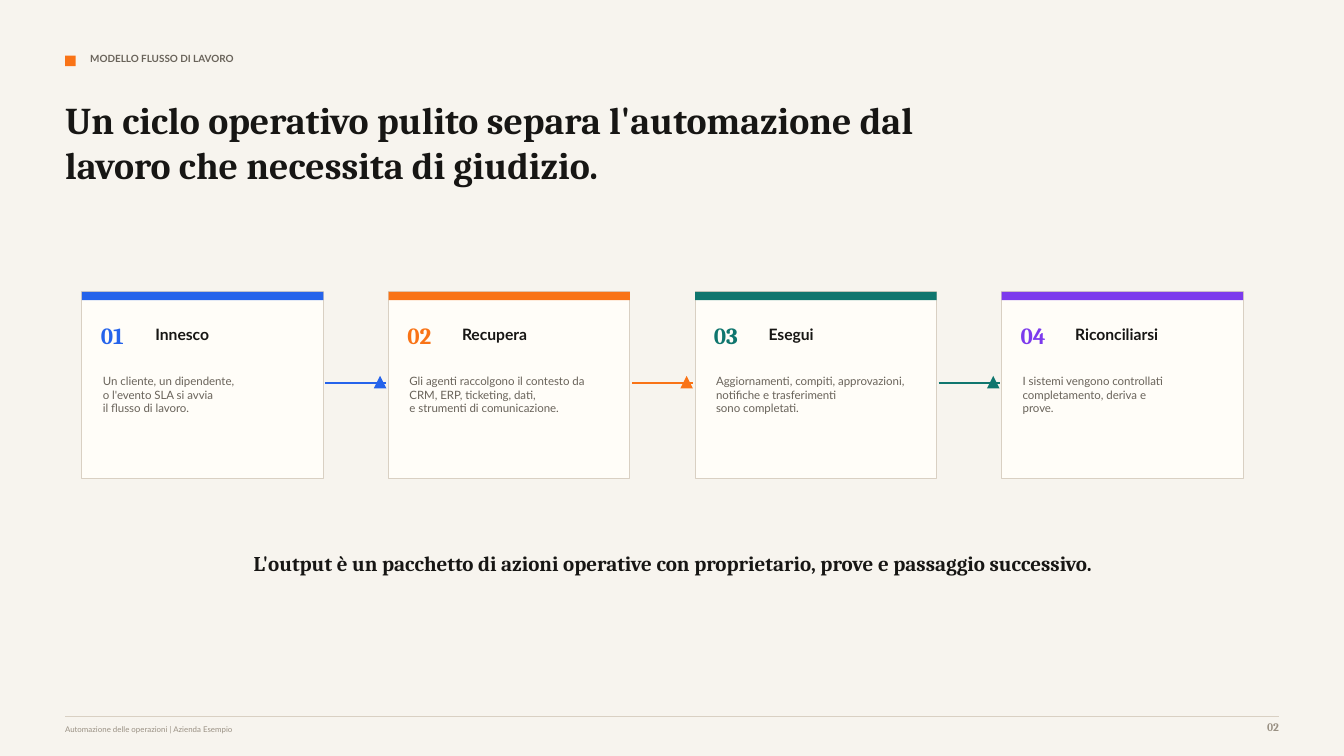
from dataclasses import dataclass

from lxml.etree import SubElement
from pptx import Presentation
from pptx.dml.color import RGBColor
from pptx.enum.shapes import MSO_CONNECTOR, MSO_SHAPE
from pptx.enum.text import PP_ALIGN
from pptx.oxml.ns import qn
from pptx.util import Pt

EMU_PER_PX = 9525


@dataclass(frozen=True)
class Theme:
    paper: str = "F7F4EE"
    card: str = "FFFDF8"
    rule: str = "D9D0C3"
    ink: str = "171614"
    body: str = "69635A"
    muted: str = "9A9184"
    blue: str = "2563EB"
    orange: str = "F97316"
    green: str = "0F766E"
    violet: str = "7C3AED"
    serif: str = "Cambria"
    sans: str = "Lato"
    title_size: float = 27
    number_size: float = 16.5
    summary_size: float = 15
    step_size: float = 11.2
    body_size: float = 8.2
    label_size: float = 7.1
    footer_size: float = 5.6


def px(*lengths):
    return [length * EMU_PER_PX for length in lengths]


class SlideBuilder:
    def __init__(self, slide, theme):
        self.slide = slide
        self.theme = theme

    def background(self, color):
        fill = self.slide.background.fill
        fill.solid()
        fill.fore_color.rgb = RGBColor.from_string(color)

    def shape(self, left, top, width, height, color, outline=None,
              kind=MSO_SHAPE.RECTANGLE):
        shape = self.slide.shapes.add_shape(kind, *px(left, top, width, height))
        shape.shadow.inherit = False
        shape.fill.solid()
        shape.fill.fore_color.rgb = RGBColor.from_string(color)
        if outline:
            shape.line.color.rgb = RGBColor.from_string(outline)
            shape.line.width = Pt(0.75)
        else:
            shape.line.fill.background()

    def line(self, left, right, y, color, weight):
        line = self.slide.shapes.add_connector(
            MSO_CONNECTOR.STRAIGHT, *px(left, y, right, y))
        line.line.color.rgb = RGBColor.from_string(color)
        line.line.width = Pt(weight)
        SubElement(line._element.spPr, qn("a:effectLst"))

    def text(self, left, top, width, height, lines, size, color, font=None,
             bold=True, align=PP_ALIGN.LEFT):
        box = self.slide.shapes.add_textbox(*px(left, top, width, height))
        frame = box.text_frame
        frame.word_wrap = True
        frame.margin_left = frame.margin_right = 0
        frame.margin_top = frame.margin_bottom = 0
        frame.text = "\n".join(lines)
        for para in frame.paragraphs:
            para.alignment = align
            para.font.name = font or self.theme.sans
            para.font.size = Pt(size)
            para.font.bold = bold
            para.font.color.rgb = RGBColor.from_string(color)

    def step_card(self, left, number, name, lines, color):
        theme = self.theme
        self.shape(left, 278, 230, 178, theme.card, outline=theme.rule)
        self.shape(left, 278, 230, 8, color)
        self.text(left + 18, 306, 44, 28, [f"{number:02}"],
                  theme.number_size, color, theme.serif)
        self.text(left + 70, 309, 128, 20, [name], theme.step_size, theme.ink)
        self.text(left + 20, 356, 184, 68, lines, theme.body_size, theme.body,
                  bold=False)

    def step_link(self, left, color):
        self.line(left, left + 58, 365, color, 1.75)
        self.shape(left + 46, 358, 12, 12, color,
                   kind=MSO_SHAPE.ISOSCELES_TRIANGLE)


def main():
    theme = Theme()
    deck = Presentation()
    deck.slide_width, deck.slide_height = px(1280, 720)
    page = SlideBuilder(deck.slides.add_slide(deck.slide_layouts[6]), theme)
    page.background(theme.paper)

    # Header
    page.shape(62, 53, 10, 10, theme.orange)
    page.text(86, 50, 620, 18, ["MODELLO FLUSSO DI LAVORO"],
              theme.label_size, theme.body)
    page.text(62, 92, 900, 104,
              ["Un ciclo operativo pulito separa l'automazione dal "
               "lavoro che necessita di giudizio."],
              theme.title_size, theme.ink, theme.serif)

    # Workflow steps and the links between them
    steps = [
        ("Innesco", theme.blue,
         ["Un cliente, un dipendente,", "o l'evento SLA si avvia",
          "il flusso di lavoro."]),
        ("Recupera", theme.orange,
         ["Gli agenti raccolgono il contesto da", "CRM, ERP, ticketing, dati,",
          "e strumenti di comunicazione."]),
        ("Esegui", theme.green,
         ["Aggiornamenti, compiti, approvazioni,", "notifiche e trasferimenti",
          "sono completati."]),
        ("Riconciliarsi", theme.violet,
         ["I sistemi vengono controllati", "completamento, deriva e",
          "prove."]),
    ]
    for index, (name, color, lines) in enumerate(steps):
        left = 78 + 292 * index
        page.step_card(left, index + 1, name, lines, color)
        if index < len(steps) - 1:
            page.step_link(left + 232, color)

    # Summary
    page.text(176, 524, 930, 42,
              ["L'output è un pacchetto di azioni operative con proprietario, "
               "prove e passaggio successivo."],
              theme.summary_size, theme.ink, theme.serif,
              align=PP_ALIGN.CENTER)

    # Footer
    page.line(62, 1218, 682, theme.rule, 0.75)
    page.text(62, 690, 760, 14,
              ["Automazione delle operazioni | Azienda Esempio"],
              theme.footer_size, theme.muted, bold=False)
    page.text(1170, 686, 48, 18, ["02"], theme.body_size, theme.muted,
              theme.serif, align=PP_ALIGN.RIGHT)

    deck.save("out.pptx")


if __name__ == "__main__":
    main()
